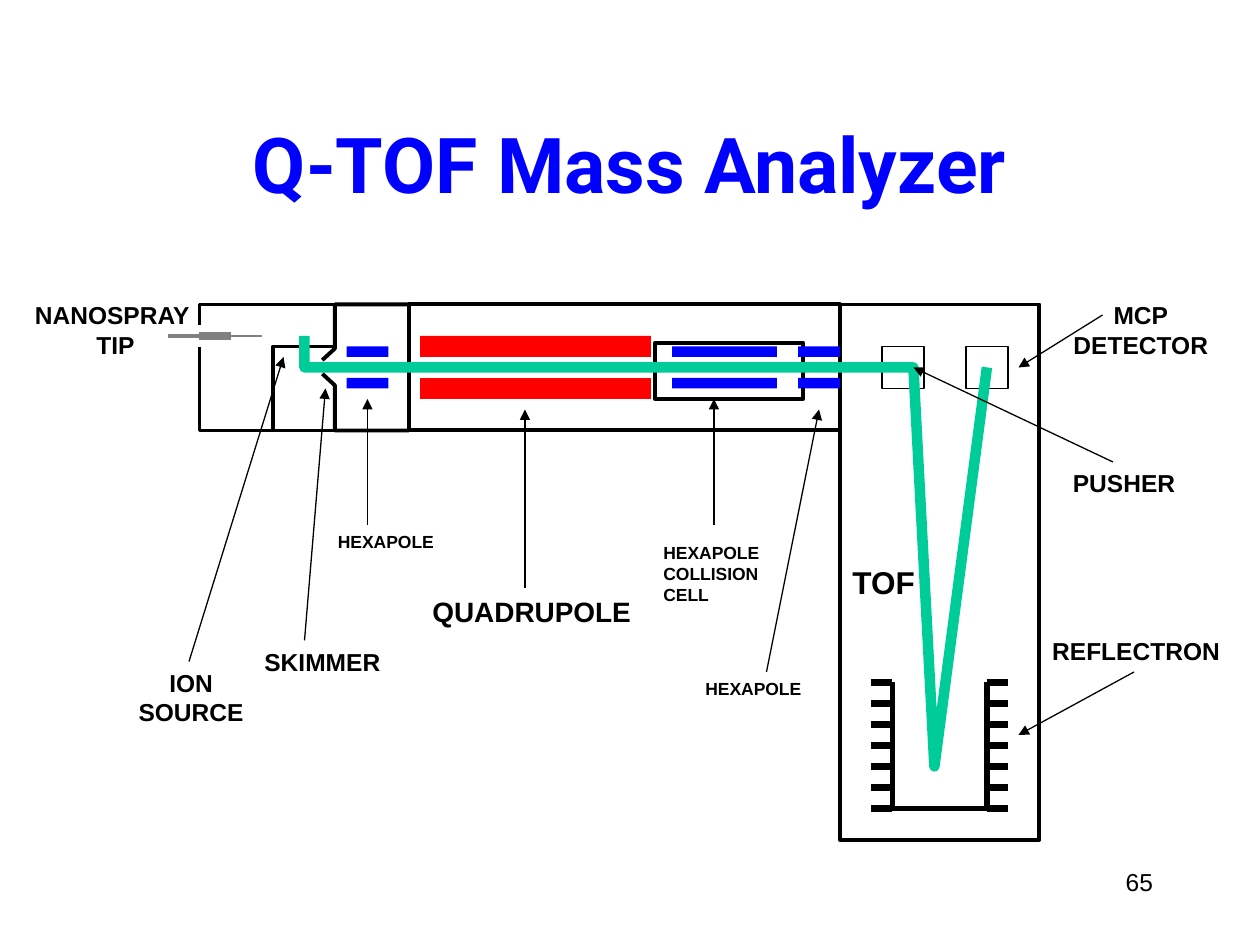
from lxml.etree import SubElement
from pptx import Presentation
from pptx.dml.color import RGBColor
from pptx.enum.shapes import MSO_CONNECTOR, MSO_SHAPE
from pptx.enum.text import MSO_ANCHOR, MSO_AUTO_SIZE, PP_ALIGN
from pptx.oxml.ns import qn
from pptx.util import Inches, Pt

BLACK = RGBColor(0x00, 0x00, 0x00)
WHITE = RGBColor(0xFF, 0xFF, 0xFF)
BLUE = RGBColor(0x00, 0x00, 0xFF)
RED = RGBColor(0xFF, 0x00, 0x00)
GREEN = RGBColor(0x00, 0xCC, 0x99)
GREY = RGBColor(0x80, 0x80, 0x80)
LEFT, CENTER, RIGHT = PP_ALIGN.LEFT, PP_ALIGN.CENTER, PP_ALIGN.RIGHT

prs = Presentation()
prs.slide_width, prs.slide_height = Inches(10), Inches(7.5)
s = prs.slides.add_slide(prs.slide_layouts[5])
shapes = s.shapes

# Grid of 120 columns by 90 rows; every position below is in grid units
U = prs.slide_width // 120


def add_box(x, y, w, h, fill, width=0):
    sp = shapes.add_shape(MSO_SHAPE.RECTANGLE, *(round(v * U) for v in (x, y, w, h)))
    sp.shadow.inherit = False
    sp.fill.solid()
    sp.fill.fore_color.rgb = fill
    if width:
        sp.line.color.rgb = BLACK
        sp.line.width = Pt(width)
    else:
        sp.line.fill.background()


def add_line(x1, y1, x2, y2, color=BLACK, width=0.75, arrow=False):
    ends = (round(v * U) for v in (x1, y1, x2, y2))
    c = shapes.add_connector(MSO_CONNECTOR.STRAIGHT, *ends)
    c.line.color.rgb = color
    c.line.width = Pt(width)
    if arrow:
        SubElement(c.line._get_or_add_ln(), qn("a:tailEnd"), type="triangle")
    SubElement(c._element.spPr, qn("a:effectLst"))


# Title
title = shapes.title
title.left, title.top, title.width, title.height = 9 * U, 8 * U, 102 * U, 15 * U
tf = title.text_frame
tf.vertical_anchor = MSO_ANCHOR.MIDDLE
p = tf.paragraphs[0]
p.alignment = CENTER
r = p.add_run()
r.text = "Q-TOF Mass Analyzer"
r.font.name, r.font.size, r.font.bold = "Roboto", Pt(44), True
r.font.color.rgb = BLUE

# Flight tube with pusher and detector
add_box(80, 29, 19, 51, WHITE, 2.25)
for x in (84, 92):
    add_box(x, 33, 4, 4, WHITE, 0.75)

# Reflectron plates
for row in range(7):
    y = 65 + 2 * row
    add_line(94, y, 96, y, width=4.5)
    add_line(85, y, 83, y, width=4.5)

# Quadrupole chamber and collision cell
add_box(38.95, 29, 41.05, 12, WHITE, 2.25)
add_box(62.4, 32.65, 14.1, 5.35, WHITE, 2.25)

# Reflectron cup, skimmer cones, source housing and ion path
outlines = [
    ([(85, 65), (85, 77), (94, 77), (94, 65)], BLACK, 3),
    ([(38.95, 41), (31.9, 41), (31.9, 36.7), (30.7, 35.6)], BLACK, 2.25),
    ([(38.95, 29), (31.9, 29), (31.9, 33.2), (30.7, 34.3)], BLACK, 2.25),
    ([(31.9, 33), (26, 33), (26, 41), (31.9, 41)], BLACK, 2.25),
    ([(32, 29), (19, 29), (19, 31)], BLACK, 2.25),
    ([(26, 41), (19, 41), (19, 33)], BLACK, 2.25),
    ([(29, 32), (29, 35), (87, 35), (89, 73), (94, 35)], GREEN, 6),
]
for points, color, width in outlines:
    start, *rest = [(round(x * U), round(y * U)) for x, y in points]
    fb = shapes.build_freeform(*start)
    fb.add_line_segments(rest, close=False)
    sp = fb.convert_to_shape()
    sp.shadow.inherit = False
    sp.fill.background()
    sp.line.color.rgb = color
    sp.line.width = Pt(width)

# Rod pairs: quadrupole, then hexapoles
for y in (36, 32):
    add_box(40, y, 22, 2, RED)
for x, w in ((33, 4), (76, 4), (64, 10)):
    for y in (33, 36):
        add_box(x, y, w, 1, BLUE)

# Nanospray needle
for x1, x2, width in ((16, 22, 2.25), (19, 22, 4.5), (19, 25, 0.75)):
    add_line(x1, 32, x2, 32, GREY, width)

# Pointers from labels to parts
pointers = [
    (18, 63, 27, 34), (29, 61, 31, 37), (35, 50, 35, 38),
    (50, 56, 50, 39), (68, 50, 68, 38), (73, 64, 78, 39),
    (108, 64, 97, 70), (105, 30, 97, 35), (106, 44, 87, 35),
]
for ends in pointers:
    add_line(*ends, arrow=True)

# Labels and page number: lines, left, top, width, height, size, alignment, bold
labels = [
    (["TOF"], 80, 53, 8.5, 4.8, 18, LEFT, True),
    (["NANOSPRAY ", "TIP"], 2, 28, 18, 6.8, 14, CENTER, True),
    (["ION", "SOURCE"], 12, 63, 12.4, 6.8, 14, CENTER, True),
    (["HEXAPOLE", "COLLISION", "CELL"], 62, 51, 11.6, 7.2, 10, LEFT, True),
    (["HEXAPOLE"], 66, 64, 11.6, 3.2, 10, LEFT, True),
    (["HEXAPOLE"], 31, 50, 11.6, 3.2, 10, LEFT, True),
    (["QUADRUPOLE"], 40, 56, 21.5, 4.4, 16, LEFT, True),
    (["MCP", "DETECTOR"], 101, 28, 15.3, 6.8, 14, CENTER, True),
    (["REFLECTRON"], 99, 60, 18.4, 4, 14, CENTER, True),
    (["SKIMMER"], 24, 61, 13.8, 4, 14, LEFT, True),
    (["PUSHER"], 101, 44, 12.5, 4, 14, LEFT, True),
    (["65"], 86, 82, 25, 6, 14, RIGHT, False),
]
for lines, x, y, w, h, size, align, bold in labels:
    tb = shapes.add_textbox(*(round(v * U) for v in (x, y, w, h)))
    tf = tb.text_frame
    tf.word_wrap = not bold
    tf.auto_size = MSO_AUTO_SIZE.SHAPE_TO_FIT_TEXT if bold else MSO_AUTO_SIZE.NONE
    for i, text in enumerate(lines):
        p = tf.add_paragraph() if i else tf.paragraphs[0]
        p.alignment = align
        r = p.add_run()
        r.text = text
        r.font.name, r.font.size, r.font.bold = "Arial", Pt(size), bold
        r.font.color.rgb = BLACK

prs.save("out.pptx")
